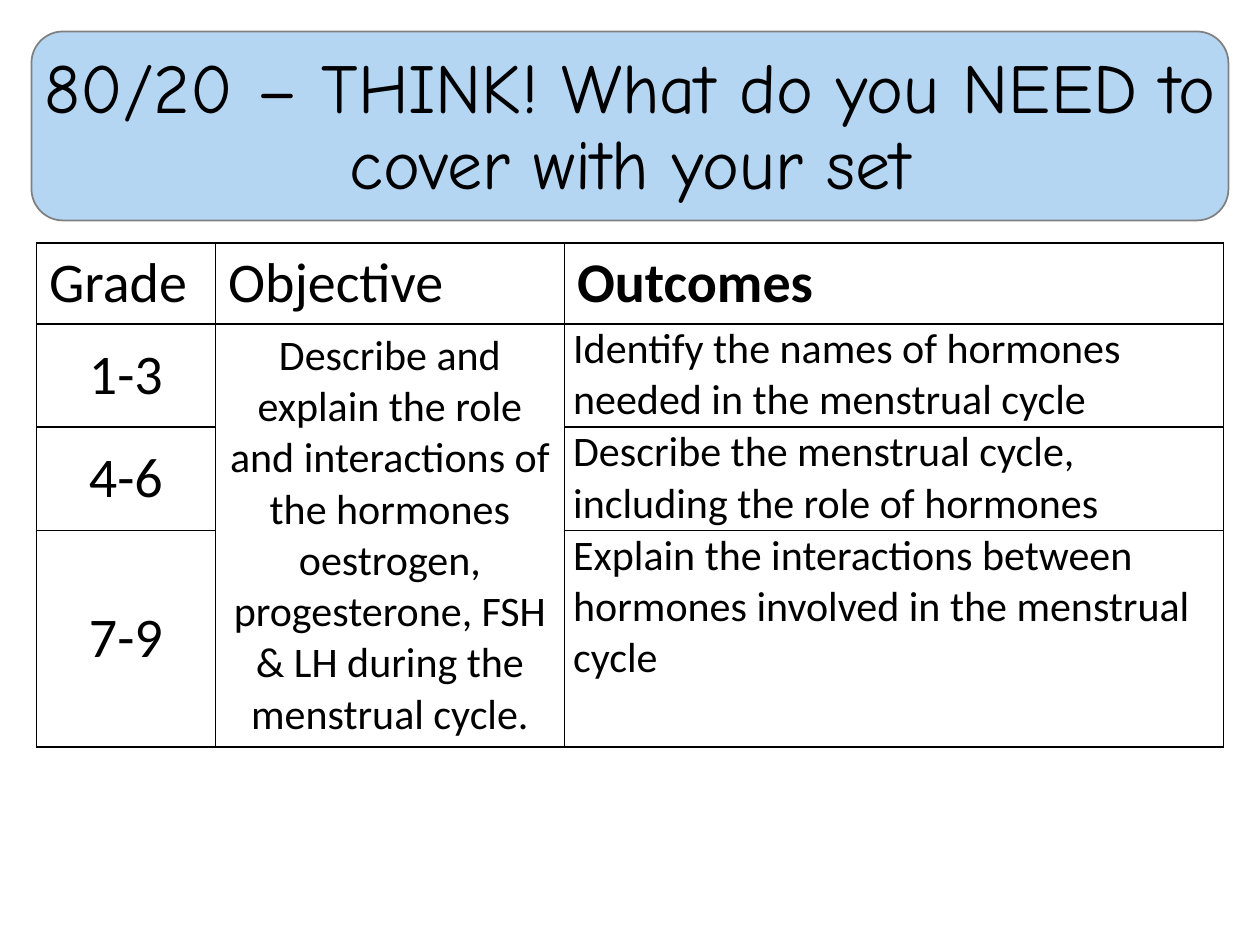
from pptx import Presentation
from pptx.dml.color import RGBColor as Rgb
from pptx.enum.shapes import MSO_SHAPE as Shape
from pptx.enum.text import MSO_ANCHOR as Anchor, PP_ALIGN as Align
from pptx.oxml import parse_xml
from pptx.oxml.ns import nsdecls
from pptx.util import Inches, Pt

hues = {"sky": "B4D6F2", "grey": "808080", "ink": "000000", "page": "FFFFFF"}
hues = {name: Rgb.from_string(code) for name, code in hues.items()}

deck = Presentation()
deck.slide_width, deck.slide_height = Inches(10), Inches(7.5)
slide = deck.slides.add_slide(deck.slide_layouts[6])


def write(frame, text, align, face, size, bold=False):
    para = frame.paragraphs[0]
    para.alignment = align
    run = para.add_run()
    run.text = text
    for key, val in {"name": face, "size": Pt(size), "bold": bold}.items():
        setattr(run.font, key, val)
    run.font.color.rgb = hues["ink"]
    return para


def edge(cell):
    props = cell._tc.get_or_add_tcPr()
    for spot, side in enumerate(("lnL", "lnR", "lnT", "lnB")):
        props.insert(spot, parse_xml(
            f'<a:{side} {nsdecls("a")} w="{Pt(1)}"><a:solidFill>'
            f'<a:srgbClr val="{hues["ink"]}"/></a:solidFill></a:{side}>'))


# Title panel
left, top, wide = Inches(0.25), Inches(0.25), Inches(9.5)
panel = slide.shapes.add_shape(Shape.ROUNDED_RECTANGLE, left, top, wide, Inches(1.5))
panel.shadow.inherit = False
panel.fill.solid()
panel.fill.fore_color.rgb = hues["sky"]
panel.line.color.rgb = hues["grey"]
panel.line.width = Pt(1)

# Title text
title = slide.shapes.add_textbox(left, top, wide, Inches(1.42)).text_frame
title.word_wrap = True
title.vertical_anchor = Anchor.BOTTOM
write(title, "80/20 – THINK! What do you NEED to cover with your set",
      Align.CENTER, "Comic Neue", 40).line_spacing = 0.9

# Table grid
cols = [1.42, 2.77, 5.23]
rows = [0.64, 0.82, 0.82, 1.72]
goal = ("Describe and explain the role and interactions of the hormones "
        "oestrogen, progesterone, FSH & LH during the menstrual cycle.")
words = [
    ["Grade", "Objective", "Outcomes"],
    ["1-3", goal, "Identify the names of hormones needed in the menstrual cycle"],
    ["4-6", "", "Describe the menstrual cycle, including the role of hormones"],
    ["7-9", "", "Explain the interactions between hormones involved in the menstrual cycle"],
]
grid = slide.shapes.add_table(len(rows), len(cols), Inches(0.29), Inches(1.93),
                              Inches(sum(cols)), Inches(sum(rows))).table
for col, size in zip(grid.columns, cols):
    col.width = Inches(size)
for row, size in zip(grid.rows, rows):
    row.height = Inches(size)
grid.cell(1, 1).merge(grid.cell(3, 1))

# Formats by role: cell settings, then alignment and text size
roomy = {"margin_left": Inches(0.1), "margin_right": Inches(0.1),
         "margin_top": Inches(0.05), "margin_bottom": Inches(0.05)}
tight = {"margin_left": Inches(0.07), "margin_right": Inches(0.07),
         "margin_top": 0, "margin_bottom": 0}
mid = {**roomy, "vertical_anchor": Anchor.MIDDLE}
head = (roomy, Align.LEFT, 32)
body = [(mid, Align.CENTER, 32), (mid, Align.CENTER, 24), (tight, Align.LEFT, 24)]

# Table cells
for r, line in enumerate(words):
    for c, text in enumerate(line):
        cell = grid.cell(r, c)
        look, align, size = body[c] if r else head
        for key, val in look.items():
            setattr(cell, key, val)
        cell.fill.solid()
        cell.fill.fore_color.rgb = hues["page"]
        edge(cell)
        if text:
            write(cell.text_frame, text, align, "Calibri", size, text == "Outcomes")

deck.save("out.pptx")
